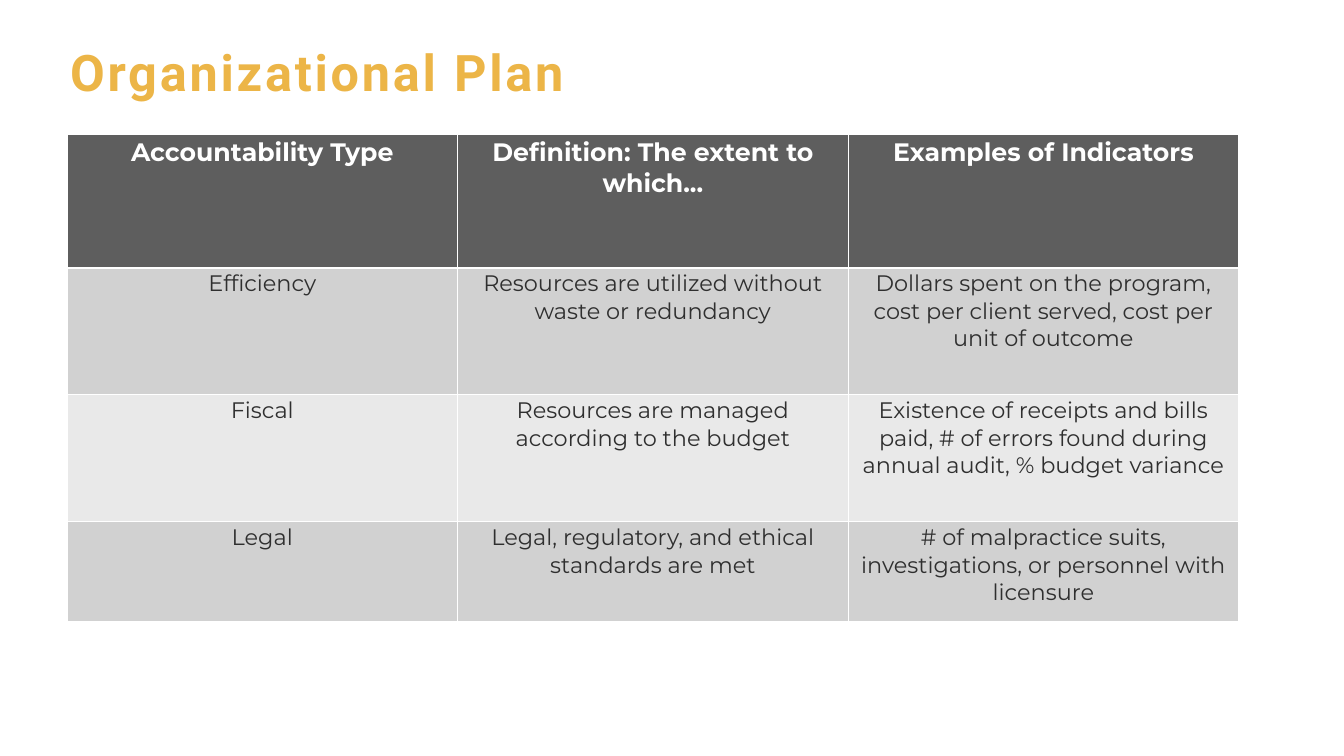
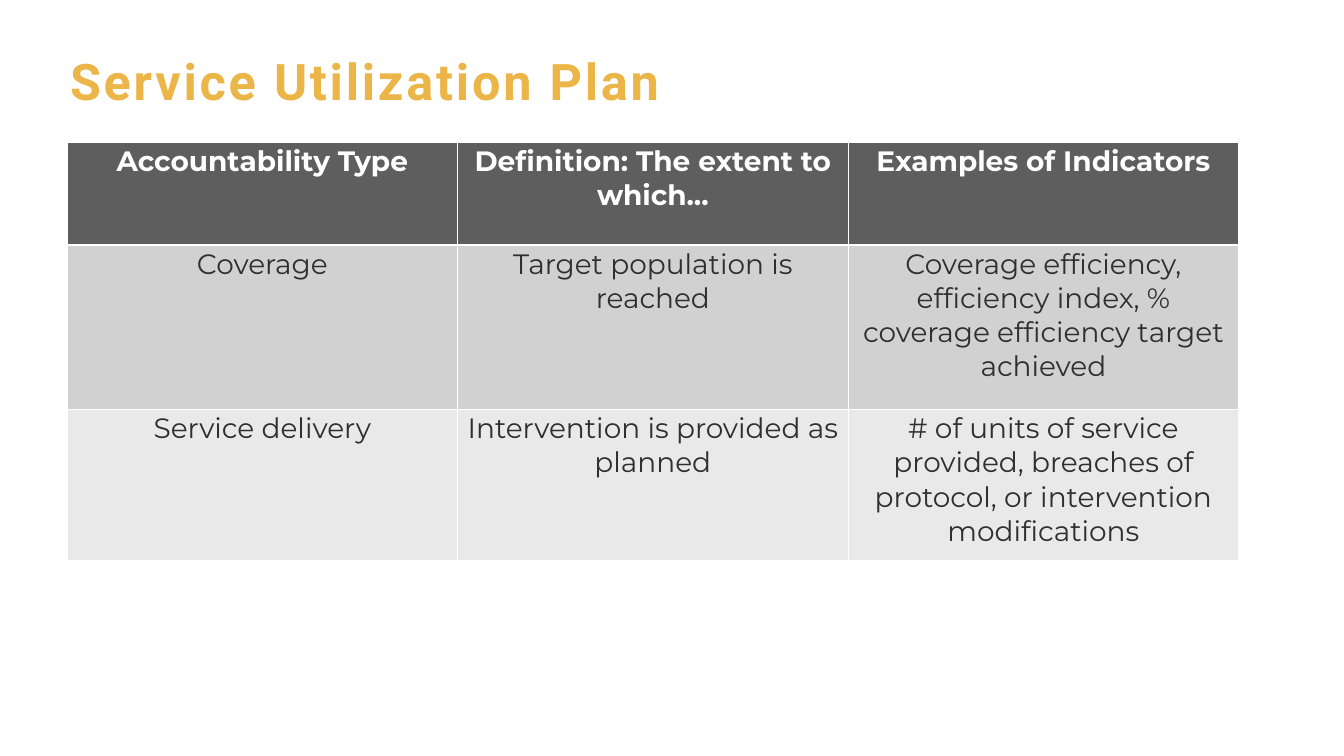
from pptx import Presentation
from pptx.dml.color import RGBColor
from pptx.enum.text import MSO_ANCHOR, PP_ALIGN
from pptx.oxml.ns import qn
from pptx.util import Pt
from lxml.etree import SubElement

EMU_PER_PX = 9144  # 100 px to the inch
SLIDE_WIDTH, SLIDE_HEIGHT = 2667, 1500
LEFT = 133
COLORS = {
    "title": "ECB547",
    "header": "5E5E5E",
    "dark band": "D1D1D1",
    "light band": "E9E9E9",
    "text": "2F2F2F",
    "white": "FFFFFF",
}
HEADINGS = ["Accountability Type", "Definition: The extent to which...",
            "Examples of Indicators"]


def px(length):
    return length * EMU_PER_PX


def color(name):
    return RGBColor.from_string(COLORS[name])


class Deck:
    title_font, table_font = "Roboto", "Montserrat"

    def __init__(self):
        self.presentation = Presentation()
        self.presentation.slide_width = px(SLIDE_WIDTH)
        self.presentation.slide_height = px(SLIDE_HEIGHT)
        self.slide = None

    def add_slide(self):
        self.slide = self.presentation.slides.add_slide(
            self.presentation.slide_layouts[6])
        background = self.slide.background.fill
        background.solid()
        background.fore_color.rgb = color("white")

    def style(self, paragraph, name, size, color_name, bold):
        font = paragraph.font
        font.name, font.size, font.bold = name, Pt(size), bold
        font.color.rgb = color(color_name)

    def title(self, text, top):
        box = self.slide.shapes.add_textbox(px(LEFT), px(top), px(2133), px(165))
        frame = box.text_frame
        frame.word_wrap = True
        frame.vertical_anchor = MSO_ANCHOR.TOP
        frame.margin_left = frame.margin_right = px(6)
        frame.margin_top = frame.margin_bottom = px(6)
        paragraph = frame.paragraphs[0]
        paragraph.text = text
        paragraph.line_spacing = 0.8
        self.style(paragraph, self.title_font, 72, "title", True)
        # Letter spacing in hundredths of a point
        paragraph.runs[0].font._element.set("spc", "400")

    def border(self, cell, side, width):
        line = SubElement(cell._tc.get_or_add_tcPr(), qn(f"a:ln{side}"),
                          w=str(Pt(width)))
        fill = SubElement(line, qn("a:solidFill"))
        SubElement(fill, qn("a:srgbClr"), val=COLORS["white"])

    def cell(self, cell, text, row, size):
        # Borders come before the fill; the rule under the header is thicker
        widths = {"L": 1, "R": 1, "T": 3 if row == 1 else 1,
                  "B": 3 if row == 0 else 1}
        for side, width in widths.items():
            self.border(cell, side, width)
        header = row == 0
        band = "header" if header else "dark band" if row % 2 else "light band"
        cell.fill.solid()
        cell.fill.fore_color.rgb = color(band)
        paragraph = cell.text_frame.paragraphs[0]
        paragraph.text = text
        paragraph.alignment = PP_ALIGN.CENTER
        self.style(paragraph, self.table_font, size,
                   "white" if header else "text", header)

    def table(self, top, heights, body, header_size, body_size):
        rows = [HEADINGS, *body]
        frame = self.slide.shapes.add_table(
            len(rows), len(HEADINGS), px(LEFT), px(top), px(2325),
            px(sum(heights)))
        table = frame.table
        for column in table.columns:
            column.width = px(775)
        for row, (height, texts) in enumerate(zip(heights, rows)):
            table.rows[row].height = px(height)
            for column, text in enumerate(texts):
                self.cell(table.cell(row, column), text, row,
                          body_size if row else header_size)


def main():
    deck = Deck()

    # Organizational plan
    deck.add_slide()
    deck.title("Organizational Plan", 99)
    deck.table(267, [264, 252, 252, 198], [
        ["Efficiency", "Resources are utilized without waste or redundancy",
         "Dollars spent on the program, cost per client served, "
         "cost per unit of outcome"],
        ["Fiscal", "Resources are managed according to the budget",
         "Existence of receipts and bills paid, # of errors found during "
         "annual audit, % budget variance"],
        ["Legal", "Legal, regulatory, and ethical standards are met",
         "# of malpractice suits, investigations, or personnel with licensure"],
    ], header_size=36, body_size=32)

    # Service utilization plan
    deck.add_slide()
    deck.title("Service Utilization Plan", 117)
    deck.table(282, [204, 326, 299], [
        ["Coverage", "Target population is reached",
         "Coverage efficiency, efficiency index, "
         "% coverage efficiency target achieved"],
        ["Service delivery", "Intervention is provided as planned",
         "# of units of service provided, breaches of protocol, "
         "or intervention modifications"],
    ], header_size=40, body_size=40)

    deck.presentation.save("out.pptx")


if __name__ == "__main__":
    main()
